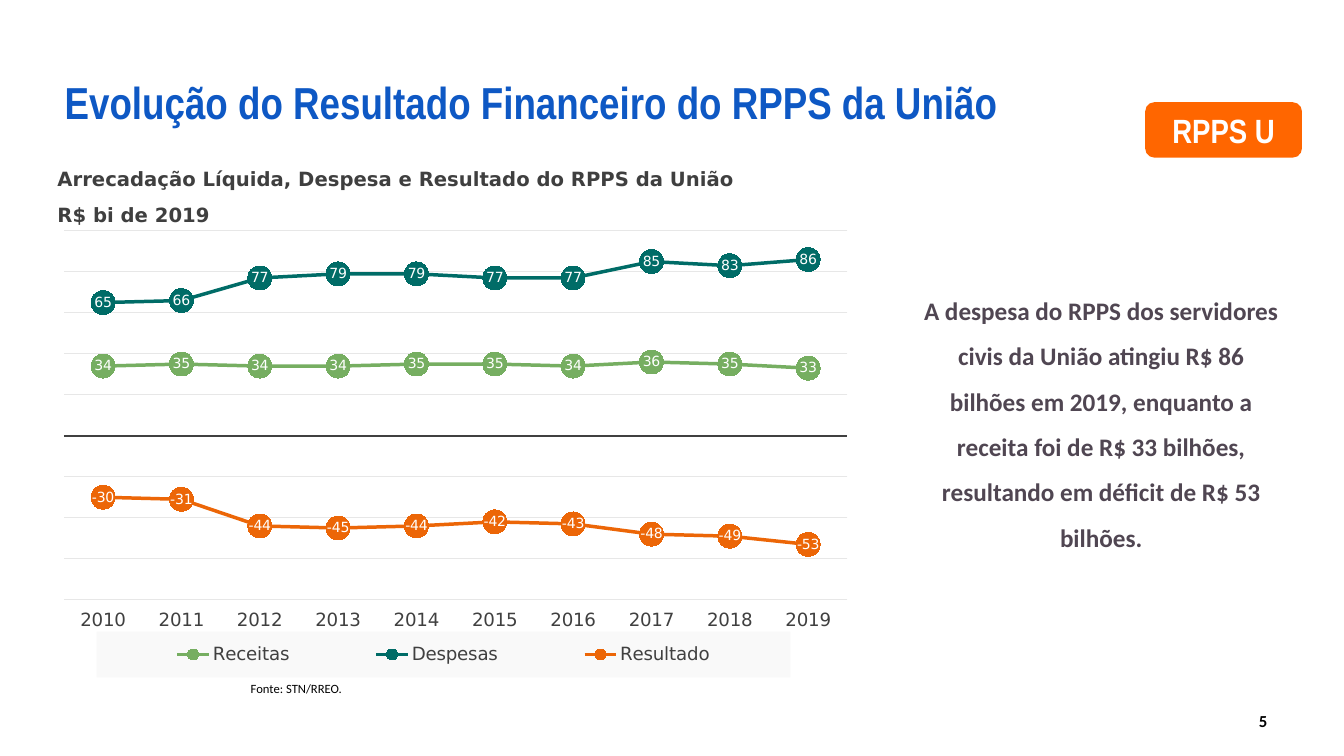
from pptx import Presentation
from pptx.chart.data import CategoryChartData
from pptx.dml.color import RGBColor
from pptx.enum.chart import (XL_CHART_TYPE, XL_LABEL_POSITION, XL_LEGEND_POSITION,
                             XL_MARKER_STYLE, XL_TICK_LABEL_POSITION, XL_TICK_MARK)
from pptx.enum.shapes import MSO_SHAPE
from pptx.enum.text import MSO_ANCHOR as ANCHOR, PP_ALIGN as ALIGN
from pptx.oxml import parse_xml
from pptx.oxml.ns import nsdecls, qn
from pptx.util import Pt

CHART_FONT = "DejaVu Sans"
GREY = "404040"
YEARS = [str(year) for year in range(2010, 2020)]
SERIES = [
    ("Receitas", "76AE61", (34, 35, 34, 34, 35, 35, 34, 36, 35, 33)),
    ("Despesas", "006C67", (65, 66, 77, 79, 79, 77, 77, 85, 83, 86)),
    ("Resultado", "EC6607", (-30, -31, -44, -45, -44, -42, -43, -48, -49, -53)),
]


def rgb(value):
    return RGBColor.from_string(value)


def style_font(font, size, color, name, bold=False):
    font.size = Pt(size)
    font.color.rgb = rgb(color)
    font.name = name
    font.bold = bold


def write(shape, lines, size, color, font, bold=True, align=ALIGN.LEFT,
          anchor=ANCHOR.TOP, spacing=None, after=0):
    frame = shape.text_frame
    frame.word_wrap = True
    frame.vertical_anchor = anchor
    for index, line in enumerate(lines):
        paragraph = frame.paragraphs[0] if index == 0 else frame.add_paragraph()
        paragraph.alignment = align
        paragraph.line_spacing = spacing
        paragraph.space_after = Pt(after)
        run = paragraph.add_run()
        run.text = line
        style_font(run.font, size, color, font, bold)


def add_text(slide, box, lines, size, color, font, **options):
    write(slide.shapes.add_textbox(*map(Pt, box)), lines, size, color, font, **options)


def add_badge(slide, box, label):
    badge = slide.shapes.add_shape(MSO_SHAPE.ROUNDED_RECTANGLE, *map(Pt, box))
    badge.shadow.inherit = False
    badge.fill.solid()
    badge.fill.fore_color.rgb = rgb("FF6600")
    badge.line.fill.background()
    write(badge, [label], 24, "FFFFFF", "Arial Narrow",
          align=ALIGN.CENTER, anchor=ANCHOR.MIDDLE)


def manual_layout(x, y, w, h, inner=False):
    """Layout element placing a chart part by fractions of the chart area."""
    target = '<c:layoutTarget val="inner"/>' if inner else ""
    return parse_xml(
        f'<c:layout {nsdecls("c")}><c:manualLayout>{target}'
        '<c:xMode val="edge"/><c:yMode val="edge"/>'
        f'<c:x val="{x}"/><c:y val="{y}"/><c:w val="{w}"/><c:h val="{h}"/>'
        '</c:manualLayout></c:layout>')


def style_series(series, color):
    series.smooth = False
    series.format.line.color.rgb = rgb(color)
    series.format.line.width = Pt(2.5)
    marker = series.marker
    marker.style = XL_MARKER_STYLE.CIRCLE
    marker.size = 17
    marker.format.fill.solid()
    marker.format.fill.fore_color.rgb = rgb(color)
    marker.format.line.color.rgb = rgb(color)
    labels = series.data_labels
    labels.show_value = True
    labels.position = XL_LABEL_POSITION.CENTER
    labels.number_format = "0"
    labels.number_format_is_linked = False
    style_font(labels.font, 10, "FFFFFF", CHART_FONT)


def style_axes(chart):
    years = chart.category_axis
    years.tick_label_position = XL_TICK_LABEL_POSITION.LOW
    years.major_tick_mark = XL_TICK_MARK.NONE
    years.format.line.color.rgb = rgb(GREY)
    years.format.line.width = Pt(1.5)
    style_font(years.tick_labels.font, 13, GREY, CHART_FONT)
    amounts = chart.value_axis
    amounts.minimum_scale, amounts.maximum_scale, amounts.major_unit = -80, 100, 20
    amounts.has_major_gridlines = True
    amounts.major_gridlines.format.line.color.rgb = rgb("E7E7E7")
    amounts.major_gridlines.format.line.width = Pt(0.75)
    amounts.visible = False


def style_legend(chart):
    chart.has_legend = True
    legend = chart.legend
    legend.position = XL_LEGEND_POSITION.BOTTOM
    legend.include_in_layout = False
    style_font(legend.font, 13, GREY, CHART_FONT)
    element = legend._element
    for old in element.findall(qn("c:layout")):
        element.remove(old)
    element.find(qn("c:legendPos")).addnext(manual_layout(0.06, 0.9, 0.85, 0.1))
    element.find(qn("c:overlay")).addnext(parse_xml(
        f'<c:spPr {nsdecls("c", "a")}><a:solidFill><a:srgbClr val="F9F9F9"/>'
        '</a:solidFill></c:spPr>'))


def add_results_chart(slide, box):
    data = CategoryChartData(number_format="0")
    data.categories = YEARS
    for name, _, values in SERIES:
        data.add_series(name, values)
    chart = slide.shapes.add_chart(XL_CHART_TYPE.LINE_MARKERS, *map(Pt, box), data).chart
    chart.has_title = False
    style_font(chart.font, 10, "000000", CHART_FONT)
    plot = chart.plots[0]
    plot.vary_by_categories = False
    for series, (_, color, _) in zip(plot.series, SERIES):
        style_series(series, color)
    style_axes(chart)
    style_legend(chart)
    plot_area = chart._chartSpace.chart.plotArea
    for old in plot_area.findall(qn("c:layout")):
        plot_area.remove(old)
    plot_area.insert(0, manual_layout(0.02, 0.02, 0.96, 0.81, inner=True))


def main():
    deck = Presentation()
    deck.slide_width, deck.slide_height = Pt(960), Pt(540)
    slide = deck.slides.add_slide(deck.slide_layouts[5])

    title = slide.shapes.title
    title.left, title.top, title.width, title.height = map(Pt, (39, 49.7, 701, 46))
    write(title, ["Evolução do Resultado Financeiro do RPPS da União"],
          32, "0E58C4", "Arial Narrow")

    add_results_chart(slide, (34, 158.4, 583, 325.4))
    add_badge(slide, (818, 73, 112, 39.6), "RPPS U")
    add_text(slide, (34, 112.3, 560, 52.6),
             ["Arrecadação Líquida, Despesa e Resultado do RPPS da União", "R$ bi de 2019"],
             14, "3F3F3F", CHART_FONT, spacing=1.19, after=6)
    add_text(slide, (652.3, 196.6, 268.6, 203.8),
             ["A despesa do RPPS dos servidores civis da União atingiu R$ 86 bilhões em 2019, "
              "enquanto a receita foi de R$ 33 bilhões, resultando em déficit de R$ 53 bilhões."],
             18, "504652", "Calibri", align=ALIGN.CENTER, spacing=1.5, after=6)
    add_text(slide, (172, 483, 480, 18), ["Fonte: STN/RREO."], 9, "000000", "Calibri",
             bold=False)
    add_text(slide, (688.3, 500.4, 224, 28.8), ["5"], 12, "000000", "Calibri",
             align=ALIGN.RIGHT, anchor=ANCHOR.MIDDLE)
    deck.save("out.pptx")


if __name__ == "__main__":
    main()
